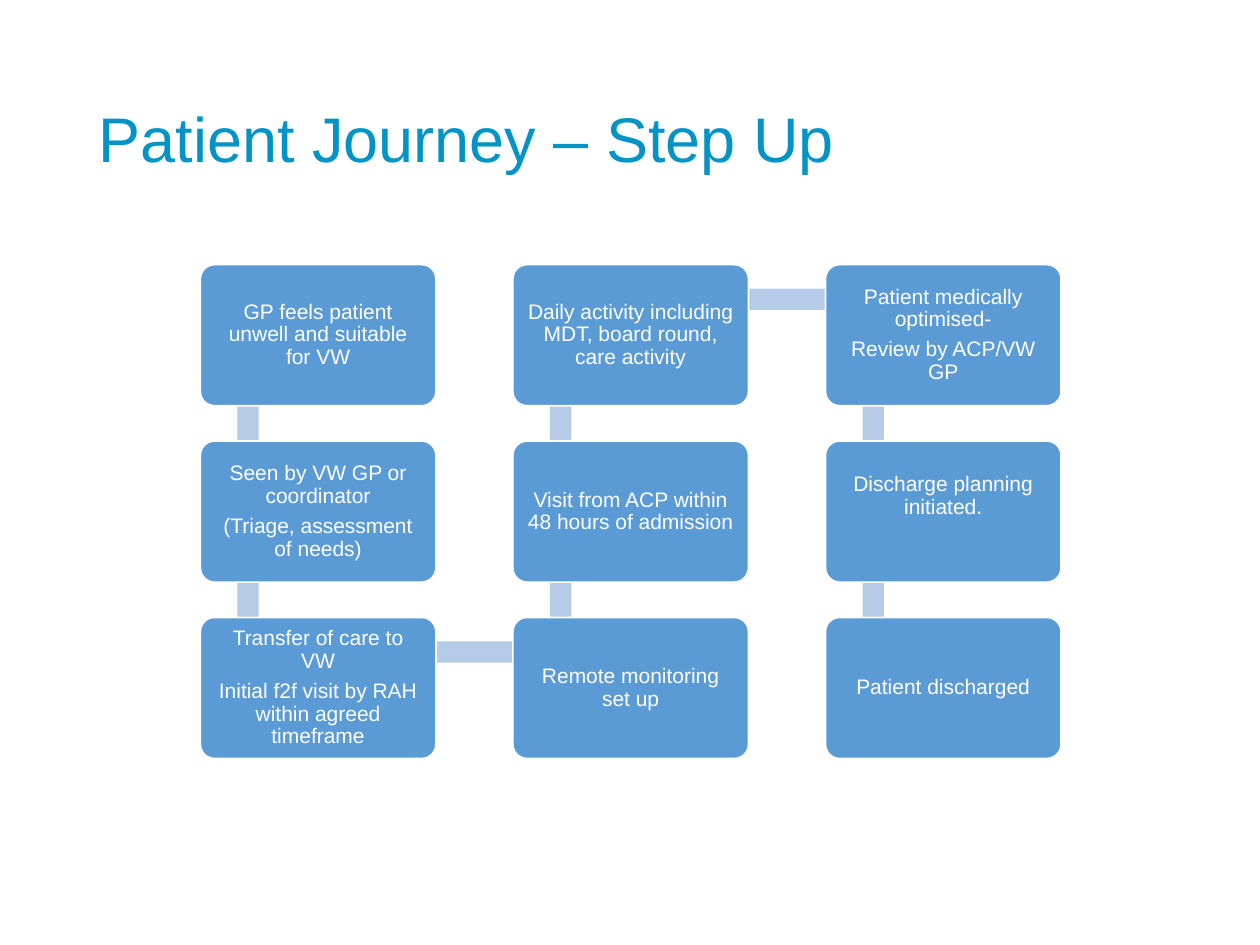
from pptx import Presentation
from pptx.dml.color import RGBColor
from pptx.enum.shapes import MSO_SHAPE
from pptx.enum.text import MSO_ANCHOR, PP_ALIGN
from pptx.util import Pt

RECTANGLE, ROUNDED = MSO_SHAPE.RECTANGLE, MSO_SHAPE.ROUNDED_RECTANGLE
LEFT, CENTER = PP_ALIGN.LEFT, PP_ALIGN.CENTER
MIDDLE = MSO_ANCHOR.MIDDLE

COLORS = {"title": "0294C7", "card": "5B9BD5", "bar": "B5CBE7", "white": "FFFFFF"}
FONT = "Arial"

CARD_WIDTH, CARD_HEIGHT = 134.64, 80.64
COLUMN_STEP, ROW_STEP = 178.6, 100.8
BAR_THICKNESS = 12.2
BAR_INSET_X, BAR_INSET_Y = 21.2, 13.7
CARD_MARGIN = 6

# Steps in order: column, row, paragraphs, extra space below the text
STEPS = [
    (0, 0, ["GP feels patient unwell and suitable for VW"], 0),
    (0, 1, ["Seen by VW GP or coordinator", "(Triage, assessment of needs)"], 0),
    (0, 2, ["Transfer of care to VW",
            "Initial f2f visit by RAH within agreed timeframe"], 0),
    (1, 2, ["Remote monitoring set up"], 0),
    (1, 1, ["Visit from ACP within 48 hours of admission"], 0),
    (1, 0, ["Daily activity including MDT, board round, care activity"], 0),
    (2, 0, ["Patient medically optimised-", "Review by ACP/VW GP"], 0),
    (2, 1, ["Discharge planning initiated."], 17.6),
    (2, 2, ["Patient discharged"], 0),
]


def color(name):
    return RGBColor.from_string(COLORS[name])


def write_text(frame, paragraphs, *, size, fill, align=LEFT, gap=0):
    frame.word_wrap = True
    frame.vertical_anchor = MIDDLE
    for index, text in enumerate(paragraphs):
        para = frame.add_paragraph() if index else frame.paragraphs[0]
        para.alignment = align
        para.line_spacing = 0.9
        if index:
            para.space_before = Pt(gap)
        span = para.add_run()
        span.text = text
        span.font.name = FONT
        span.font.size = Pt(size)
        span.font.color.rgb = color(fill)


def add_block(page, kind, box, fill):
    block = page.shapes.add_shape(kind, *map(Pt, box))
    block.shadow.inherit = False
    block.fill.solid()
    block.fill.fore_color.rgb = color(fill)
    block.line.fill.background()
    return block


def add_title(page, box, text):
    title = page.shapes.add_textbox(*map(Pt, box))
    write_text(title.text_frame, [text], size=36, fill="title")


def add_bar(page, left, top, start, end):
    """Link two neighbouring steps with a bar that runs behind their cards."""
    column, row = min(start[0], end[0]), min(start[1], end[1])
    x = left + column * COLUMN_STEP + BAR_INSET_X
    y = top + row * ROW_STEP + BAR_INSET_Y
    if start[0] == end[0]:
        size = (BAR_THICKNESS, ROW_STEP)
    else:
        size = (COLUMN_STEP, BAR_THICKNESS)
    add_block(page, RECTANGLE, (x, y, *size), "bar")


def add_card(page, box, paragraphs, extra_bottom):
    card = add_block(page, ROUNDED, box, "card")
    card.adjustments[0] = 0.1
    card.line.color.rgb = color("white")
    card.line.width = Pt(1)
    frame = card.text_frame
    frame.margin_left = frame.margin_right = frame.margin_top = Pt(CARD_MARGIN)
    frame.margin_bottom = Pt(CARD_MARGIN + extra_bottom)
    write_text(frame, paragraphs, size=12, fill="white", align=CENTER, gap=4.2)


def add_journey(page, left, top):
    # Bars first, so that the cards cover their ends
    for start, end in zip(STEPS, STEPS[1:]):
        add_bar(page, left, top, start, end)
    for column, row, paragraphs, extra_bottom in STEPS:
        box = (left + column * COLUMN_STEP, top + row * ROW_STEP,
               CARD_WIDTH, CARD_HEIGHT)
        add_card(page, box, paragraphs, extra_bottom)


def main():
    deck = Presentation()
    deck.slide_width, deck.slide_height = Pt(720), Pt(540)
    page = deck.slides.add_slide(deck.slide_layouts[6])
    add_title(page, (49.5, 28.8, 621, 104.4), "Patient Journey – Step Up")
    add_journey(page, 114.5, 151.2)
    deck.save("out.pptx")


if __name__ == "__main__":
    main()
